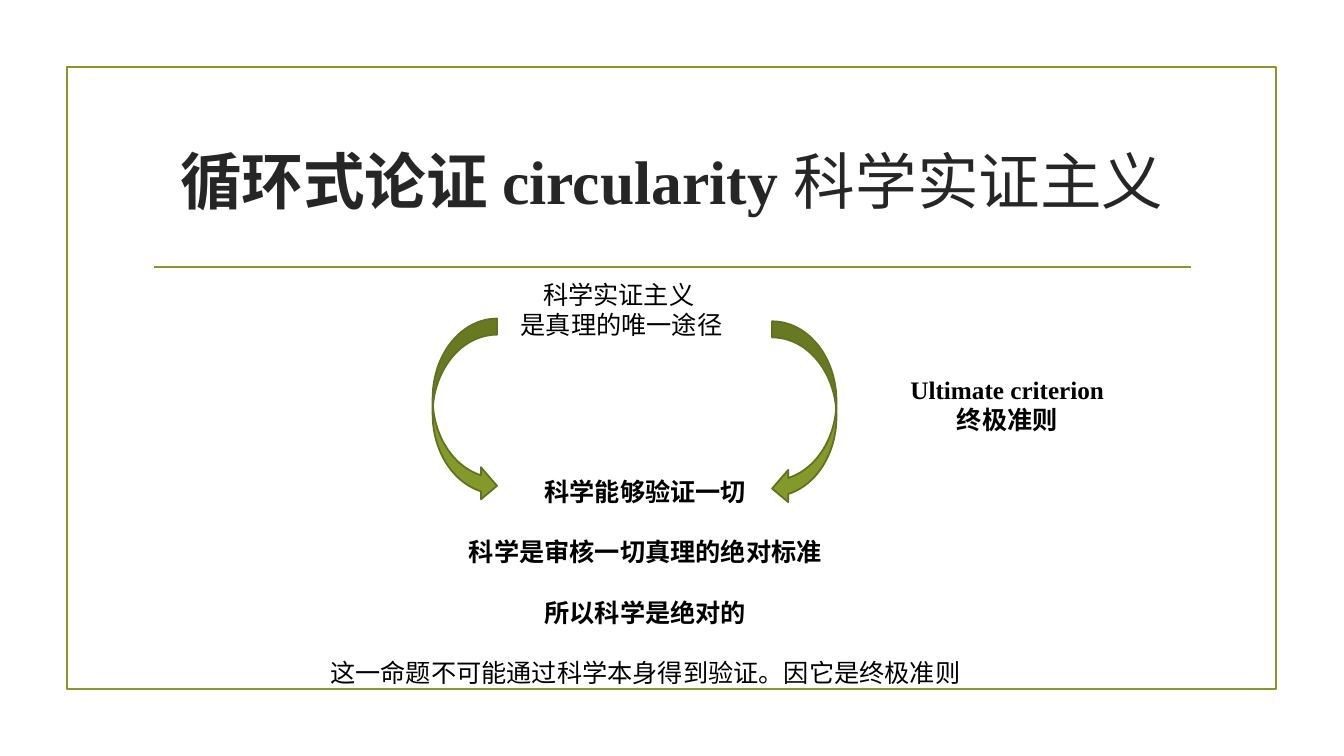
from lxml import etree
from pptx import Presentation
from pptx.dml.color import RGBColor
from pptx.enum.shapes import MSO_CONNECTOR, MSO_SHAPE
from pptx.enum.text import MSO_ANCHOR, PP_ALIGN
from pptx.oxml.ns import qn
from pptx.util import Pt

RECT, ARROW = MSO_SHAPE.RECTANGLE, MSO_SHAPE.CURVED_DOWN_ARROW
STRAIGHT = MSO_CONNECTOR.STRAIGHT
CENTER, MIDDLE, TOP = PP_ALIGN.CENTER, MSO_ANCHOR.MIDDLE, MSO_ANCHOR.TOP
LATIN, CJK = "Times New Roman", "Noto Sans CJK SC"
GREEN, DARK_GREEN, INK, BLACK = "83992A", "61711F", "262626", "000000"
LINE_HEIGHT = 21.6


def rgb(value):
    return RGBColor.from_string(value)


def add_text(box, paragraphs, size, color, anchor=TOP, line=None, gap=0):
    """Add a text box; each paragraph is a list of (text, bold) runs."""
    tf = slide.shapes.add_textbox(*map(Pt, box)).text_frame
    tf.word_wrap = True
    tf.vertical_anchor = anchor
    for i, runs in enumerate(paragraphs):
        p = tf.add_paragraph() if i else tf.paragraphs[0]
        p.alignment = CENTER
        if line:
            p.line_spacing = Pt(line)
        p.space_before = Pt(gap if i else 0)
        for text, bold in runs:
            r = p.add_run()
            r.text = text
            r.font.size, r.font.bold, r.font.name = Pt(size), bold, LATIN
            r.font.color.rgb = rgb(color)
            ea = etree.Element(qn("a:ea"), typeface=CJK)
            r.font._element.find(qn("a:latin")).addnext(ea)


prs = Presentation()
prs.slide_width, prs.slide_height = Pt(960), Pt(540)
slide = prs.slides.add_slide(prs.slide_layouts[6])

# Frame and title rule
frame = slide.shapes.add_shape(RECT, Pt(47.7), Pt(48), Pt(864), Pt(444))
frame.shadow.inherit = False
frame.fill.background()
rule = slide.shapes.add_connector(STRAIGHT, Pt(110), Pt(190.8), Pt(850.5), Pt(190.8))
etree.SubElement(rule._element.spPr, qn("a:effectLst"))
for sp in (frame, rule):
    sp.line.color.rgb = rgb(GREEN)
    sp.line.width = Pt(1.25)

add_text((102, 77, 756, 103),
         [[("循环式论证 circularity ", True), ("科学实证主义", False)]],
         44, INK, anchor=MIDDLE)

# Circular argument
add_text((364, 196, 160, 51),
         [[("科学实证主义 ", False)], [("是真理的唯一途径", False)]],
         18, BLACK, line=LINE_HEIGHT)
add_text((227, 336.5, 468, 166),
         [[("科学能够验证一切", True)],
          [("科学是审核一切真理的绝对标准", True)],
          [("所以科学是绝对的", True)],
          [("这一命题不可能通过科学本身得到验证。因它是终极准则", False)]],
         18, BLACK, line=LINE_HEIGHT, gap=LINE_HEIGHT)

for left, top, flipped in ((509, 272, False), (266.5, 270, True)):
    sp = slide.shapes.add_shape(ARROW, Pt(left), Pt(top), Pt(131), Pt(46))
    sp.rotation = 90
    if flipped:
        sp._element.spPr.find(qn("a:xfrm")).set("flipV", "1")
    sp.shadow.inherit = False
    sp.fill.solid()
    sp.fill.fore_color.rgb = rgb(GREEN)
    sp.line.color.rgb = rgb(DARK_GREEN)
    sp.line.width = Pt(1.25)

add_text((641, 263.5, 157, 51),
         [[("Ultimate criterion ", True)], [("终极准则", True)]],
         18, BLACK, line=LINE_HEIGHT)

prs.save("out.pptx")
